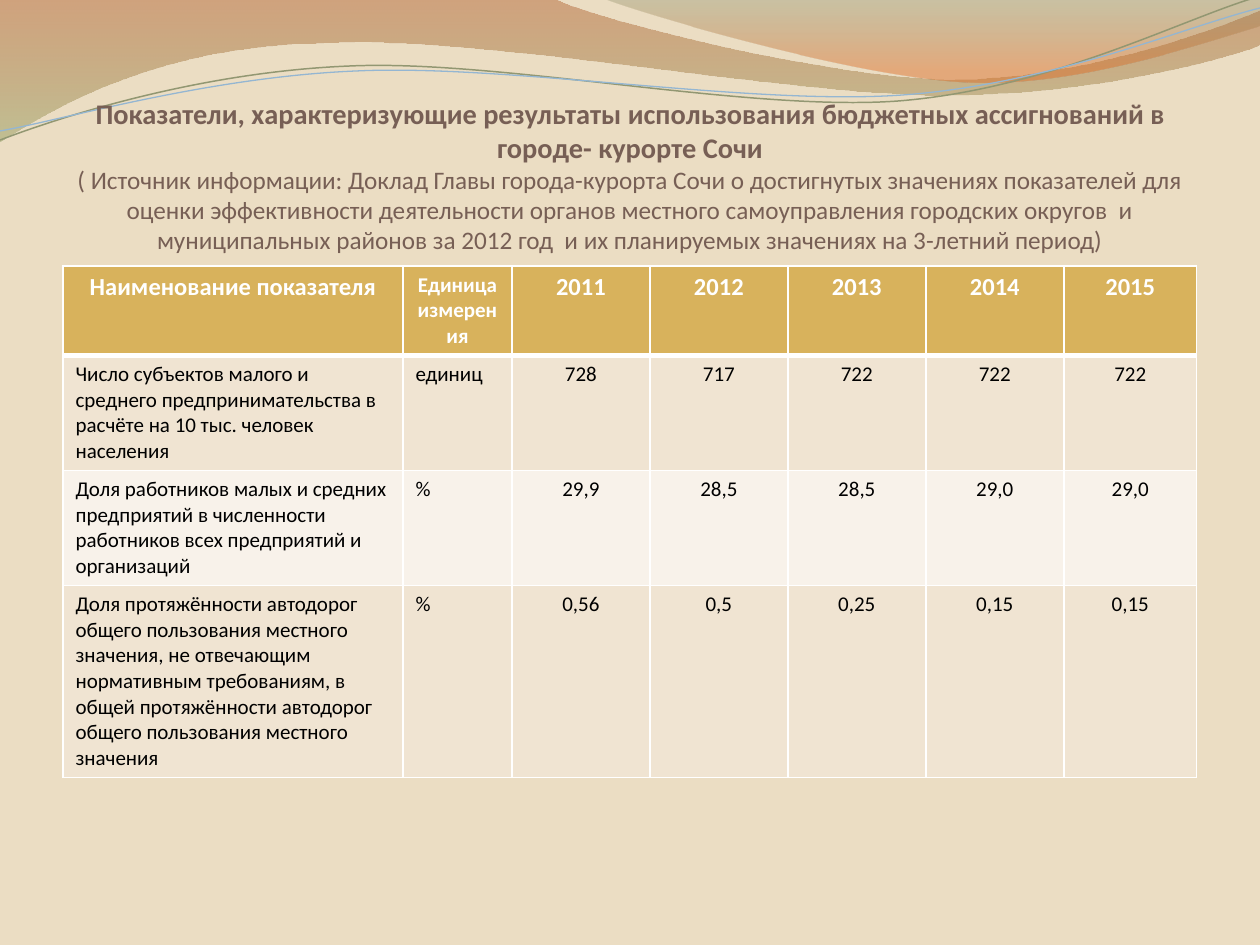
from dataclasses import dataclass

from lxml.etree import SubElement
from pptx import Presentation
from pptx.dml.color import RGBColor
from pptx.enum.text import MSO_ANCHOR, MSO_AUTO_SIZE, PP_ALIGN
from pptx.oxml.ns import qn
from pptx.util import Pt

PX = 914400 // 126  # EMU in one px


@dataclass(frozen=True)
class Theme:
    font: str = "Calibri"
    background: str = "EBDDC3"
    title: str = "775F55"
    header: str = "D8B25C"
    bands: tuple = ("F0E4D2", "F8F2EA")
    white: str = "FFFFFF"
    text: str = "000000"
    title_size: float = 16.2
    subtitle_size: float = 14.4
    header_size: float = 14
    body_size: float = 12


THEME = Theme()

TITLE = ("Показатели, характеризующие результаты использования бюджетных "
         "ассигнований в городе- курорте Сочи")
SOURCE = ("( Источник информации: Доклад Главы города-курорта Сочи о достигнутых "
          "значениях показателей для оценки эффективности деятельности органов "
          "местного самоуправления городских округов  и муниципальных районов за "
          "2012 год  и их планируемых значениях на 3-летний период)")
ROWS = [
    ["Наименование показателя", "Единица измерения",
     "2011", "2012", "2013", "2014", "2015"],
    ["Число субъектов малого и среднего предпринимательства в расчёте на "
     "10 тыс. человек населения", "единиц", "728", "717", "722", "722", "722"],
    ["Доля работников малых и средних предприятий в численности работников всех "
     "предприятий и организаций", "%", "29,9", "28,5", "28,5", "29,0", "29,0"],
    ["Доля протяжённости автодорог общего пользования местного значения, не "
     "отвечающим нормативным требованиям, в общей протяжённости автодорог общего "
     "пользования местного значения", "%", "0,56", "0,5", "0,25", "0,15", "0,15"],
]
COL_WIDTHS = [340, 109, 138, 138, 138, 138, 133]
ROW_HEIGHT = 52  # smallest height, rows grow with their text

# Wave outlines: a pair is a line end, a six is a Bezier curve (px)
WAVES = [
    ([(0, 0), (554, -1), (600, 21, 837, 79, 955, 79), (1075, 79, 1207, 33, 1260, 11),
      (1261, 45), (1239, 55, 1096, 96, 940, 95), (783, 95, 481, 35, 324, 43),
      (163, 45, 58, 105, -1, 142)],
     [(0, "AF5C29", 45), (1, "9DA66B", 55)]),
    ([(604, -1), (641, 14, 859, 78, 969, 82), (1079, 87, 1211, 40, 1260, 26), (1260, 0)],
     [(0, "7D835B", 30), (0.8, "DD6B24", 45)]),
]
WAVE_LINES = [
    ([(0, 140), (60, 117, 199, 72, 349, 66), (498, 59, 747, 112, 898, 101),
      (1050, 89, 1182, 19, 1257, -3)], "929772", 0.85),
    ([(0, 131), (59, 121, 207, 77, 357, 71), (508, 64, 752, 106, 903, 95),
      (1053, 84, 1187, 26, 1260, 8)], "94B6D2", 0.75),
]


def rgb(value):
    return RGBColor.from_string(value)


def add_run(p, text, size, color, bold=False):
    r = p.add_run()
    r.text = text
    r.font.name, r.font.size, r.font.bold = THEME.font, Pt(size), bold
    r.font.color.rgb = rgb(color)


def add_outline(slide, x, y, segments, close):
    points = [((x + seg[i]) * PX, (y + seg[i + 1]) * PX)
              for seg in segments for i in range(0, len(seg), 2)]
    builder = slide.shapes.build_freeform(*points[0])
    builder.add_line_segments(points[1:], close=close)
    sp = builder.convert_to_shape()
    sp.shadow.inherit = False
    # Join the three points of each curve into one Bezier segment
    lines = iter(list(sp._element.iter(qn("a:lnTo"))))
    for seg in segments[1:]:
        line = next(lines)
        if len(seg) == 6:
            line.addprevious(curve := line.makeelement(qn("a:cubicBezTo")))
            for part in (line, next(lines), next(lines)):
                curve.append(part[0])
                part.getparent().remove(part)
    return sp


def add_waves(slide, master, x, y):
    shapes = []
    # Translucent gradient bands
    for segments, stops in WAVES:
        sp = add_outline(slide, x, y, segments, True)
        sp.line.fill.background()
        sp.fill.gradient()
        sp.fill.gradient_angle = 270
        for stop, (position, color, _) in zip(sp.fill.gradient_stops, stops):
            stop.position = position
            stop.color.rgb = rgb(color)
        colors = sp._element.spPr.iter(qn("a:srgbClr"))
        for clr, (_, _, alpha) in zip(colors, stops):
            SubElement(clr, qn("a:alpha"), val=str(alpha * 1000))
        shapes.append(sp)
    # Thin lines
    for segments, color, width in WAVE_LINES:
        sp = add_outline(slide, x, y, segments, False)
        sp.fill.background()
        sp.line.color.rgb = rgb(color)
        sp.line.width = Pt(width)
        shapes.append(sp)
    # The waves belong to the master, behind its placeholders
    for i, sp in enumerate(shapes):
        sp._element.nvSpPr.cNvPr.set("id", str(100 + i))
        master.shapes._spTree.insert(2 + i, sp._element)


def add_title(slide, x, y, w, h):
    title = slide.shapes.title
    title.left, title.top, title.width, title.height = (v * PX for v in (x, y, w, h))
    tf = title.text_frame
    tf.word_wrap, tf.auto_size = True, MSO_AUTO_SIZE.NONE
    tf.vertical_anchor = MSO_ANCHOR.BOTTOM
    tf.margin_left = tf.margin_right = tf.margin_bottom = 0
    tf.margin_top = 6 * PX
    p = tf.paragraphs[0]
    p.alignment = PP_ALIGN.CENTER
    add_run(p, TITLE, THEME.title_size, THEME.title, bold=True)
    p.add_line_break()
    add_run(p, SOURCE, THEME.subtitle_size, THEME.title)


def set_borders(cell, top, bottom):
    tcPr = cell._tc.get_or_add_tcPr()
    sides = {"a:lnL": 1, "a:lnR": 1, "a:lnT": top, "a:lnB": bottom}
    for i, (tag, width) in enumerate(sides.items()):
        ln = SubElement(tcPr, qn(tag), w=str(Pt(width)))
        fill = SubElement(ln, qn("a:solidFill"))
        SubElement(fill, qn("a:srgbClr"), val=THEME.white)
        tcPr.insert(i, ln)  # borders come before the fill


def add_indicator_table(slide, x, y, w, h):
    frame = slide.shapes.add_table(len(ROWS), len(COL_WIDTHS),
                                   x * PX, y * PX, w * PX, h * PX)
    table = frame.table
    for col, width in zip(table.columns, COL_WIDTHS):
        col.width = width * PX
    for row in table.rows:
        row.height = ROW_HEIGHT * PX
    frame.height = h * PX
    for i, texts in enumerate(ROWS):
        header = i == 0
        for j, text in enumerate(texts):
            cell = table.cell(i, j)
            cell.fill.solid()
            cell.fill.fore_color.rgb = rgb(THEME.header if header
                                           else THEME.bands[(i - 1) % 2])
            set_borders(cell, 3 if i == 1 else 1, 3 if header else 1)
            p = cell.text_frame.paragraphs[0]
            p.alignment = PP_ALIGN.CENTER if header or j > 1 else PP_ALIGN.LEFT
            size = THEME.header_size if header and j != 1 else THEME.body_size
            add_run(p, text, size, THEME.white if header else THEME.text, header)


def main():
    prs = Presentation()
    prs.slide_width, prs.slide_height = 1260 * PX, 945 * PX
    slide = prs.slides.add_slide(prs.slide_layouts[5])
    slide.background.fill.solid()
    slide.background.fill.fore_color.rgb = rgb(THEME.background)
    add_waves(slide, prs.slide_master, 0, 0)
    add_title(slide, 63, 97, 1134, 158)
    add_indicator_table(slide, 63, 266, 1134, 504)
    prs.save("out.pptx")


if __name__ == "__main__":
    main()
